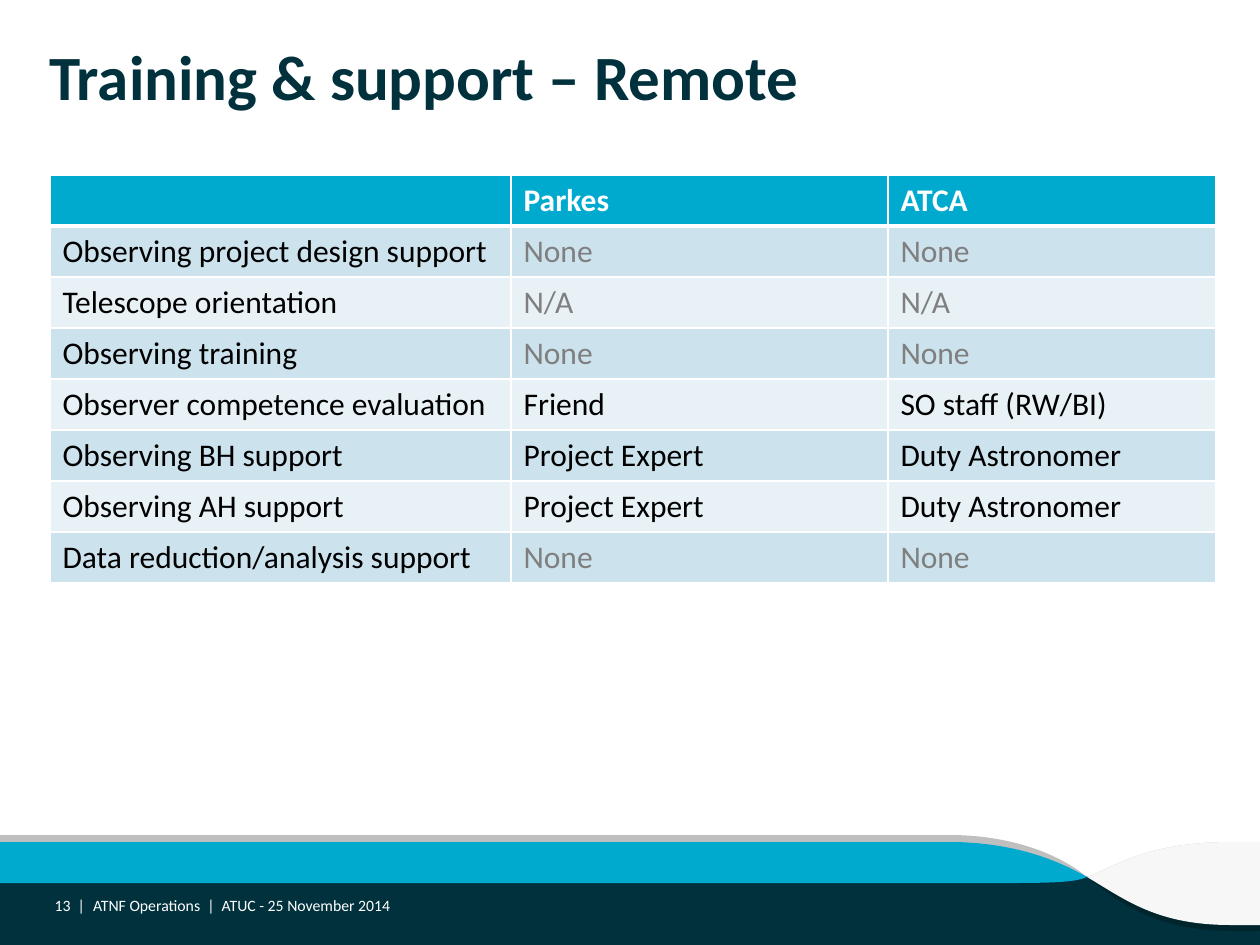
from lxml.etree import SubElement
from pptx import Presentation
from pptx.dml.color import RGBColor
from pptx.enum.shapes import MSO_SHAPE as Shape
from pptx.enum.text import MSO_ANCHOR as Anchor, PP_ALIGN as Align
from pptx.oxml.ns import qn
from pptx.util import Pt

PX = 914400 / 126
NAVY = RGBColor(0x00, 0x31, 0x3C)
DEEP = RGBColor(0x00, 0x25, 0x2D)
CYAN = RGBColor(0x00, 0xA9, 0xCE)
SILVER = RGBColor(0xBF, 0xBF, 0xBF)
MIST = RGBColor(0xF7, 0xF7, 0xF7)
WHITE = RGBColor(0xFF, 0xFF, 0xFF)
BLACK = RGBColor(0x00, 0x00, 0x00)
GREY = RGBColor(0x7F, 0x7F, 0x7F)
BAND_DARK = RGBColor(0xCC, 0xE2, 0xED)
BAND_LIGHT = RGBColor(0xE7, 0xF1, 0xF6)


def write(frame, text, color, size, bold=False, align=Align.LEFT):
    para = frame.paragraphs[0]
    para.alignment = align
    span = para.add_run()
    span.text = text
    values = {"name": "Calibri", "size": Pt(size), "bold": bold}
    for name, value in values.items():
        setattr(span.font, name, value)
    span.font.color.rgb = color


def draw_outline(page, segments):
    """Each segment holds one point for a line or three for a Bézier curve."""
    points = [(x * PX, y * PX) for segment in segments for x, y in segment]
    builder = page.shapes.build_freeform(*points[0])
    builder.add_line_segments(points[1:], close=True)
    shape = builder.convert_to_shape()
    lines = iter(list(shape._element.iter(qn("a:lnTo"))))
    for segment in segments[1:]:
        first, *others = [next(lines) for _ in segment]
        if others:
            first.tag = qn("a:cubicBezTo")
        for other in others:
            first.append(other[0])
            other.getparent().remove(other)
    return shape


deck = Presentation()
deck.slide_width, deck.slide_height = round(1260 * PX), round(945 * PX)
page = deck.slides.add_slide(deck.slide_layouts[6])

# Footer band and waves, which all meet at one crossing point
base = page.shapes.add_shape(Shape.RECTANGLE, 0, round(877 * PX),
                             round(1260 * PX), round(68 * PX))
cross = (1087, 877)
rise = [(1113, 868), (1144, 842), (1232, 842)]
tuck = [(1076, 882), (1058, 883), (1002, 883)]
waves = [
    (SILVER, [[(0, 835)], [(950, 835)], [(1009, 835), (1058, 853), cross], rise,
              [(1260, 842)], [(1260, 931)], [(1260, 877)], [(0, 877)]]),
    (DEEP, [[(0, 877)], [(1260, 877)], [(1260, 931)], [(1231, 931)],
            [(1157, 931), (1118, 902), cross], tuck, [(0, 883)]]),
    (CYAN, [[(0, 842)], [(950, 842)], [(1009, 842), (1054, 858), cross], tuck,
            [(0, 883)]]),
    (MIST, [[cross], rise, [(1260, 842)], [(1260, 925)], [(1231, 925)],
            [(1157, 925), (1126, 900), cross]]),
]
bands = [(base, NAVY)]
bands += [(draw_outline(page, segments), color) for color, segments in waves]
for band, color in bands:
    band.shadow.inherit = False
    band.fill.solid()
    band.fill.fore_color.rgb = color
    band.line.fill.background()

# Title and footer texts
texts = [
    ("Training & support – Remote", (49, 38, 1166, 117), NAVY, 36, True,
     Align.LEFT, Anchor.TOP),
    ("ATNF Operations  |  ATUC - 25 November 2014", (93, 896, 838, 18), WHITE, 9,
     False, Align.LEFT, Anchor.MIDDLE),
    ("13  |", (45, 896, 40, 18), WHITE, 9, False, Align.RIGHT, Anchor.MIDDLE),
]
for text, place, color, size, bold, align, anchor in texts:
    frame = page.shapes.add_textbox(*(round(v * PX) for v in place)).text_frame
    values = {"word_wrap": True, "vertical_anchor": anchor, "margin_left": 0,
              "margin_top": 0, "margin_right": 0, "margin_bottom": 0}
    for name, value in values.items():
        setattr(frame, name, value)
    write(frame, text, color, size, bold, align)

# Support table
rows = [
    ("", "Parkes", "ATCA"),
    ("Observing project design support", "None", "None"),
    ("Telescope orientation", "N/A", "N/A"),
    ("Observing training", "None", "None"),
    ("Observer competence evaluation", "Friend", "SO staff (RW/BI)"),
    ("Observing BH support", "Project Expert", "Duty Astronomer"),
    ("Observing AH support", "Project Expert", "Duty Astronomer"),
    ("Data reduction/analysis support", "None", "None"),
]
widths = (461, 377, 328)
place = (50, 175, sum(widths), 51 * len(rows))
table = page.shapes.add_table(len(rows), len(widths),
                              *(round(v * PX) for v in place)).table
for column, width in zip(table.columns, widths):
    column.width = round(width * PX)
for r, row in enumerate(rows):
    table.rows[r].height = round(51 * PX)
    for c, text in enumerate(row):
        cell = table.cell(r, c)
        # White borders, heavier under the header
        for side in "LRTB":
            heavy = (r, side) in ((0, "B"), (1, "T"))
            line = SubElement(cell._tc.get_or_add_tcPr(), qn(f"a:ln{side}"),
                              w=str(Pt(3 if heavy else 1)))
            paint = SubElement(line, qn("a:solidFill"))
            SubElement(paint, qn("a:srgbClr"), val=str(WHITE))
        cell.fill.solid()
        cell.fill.fore_color.rgb = (CYAN if r == 0 else
                                    BAND_DARK if r % 2 else BAND_LIGHT)
        if text:
            color = (WHITE if r == 0 else
                     GREY if text in ("None", "N/A") else BLACK)
            write(cell.text_frame, text, color, 18, bold=r == 0)

deck.save("out.pptx")
